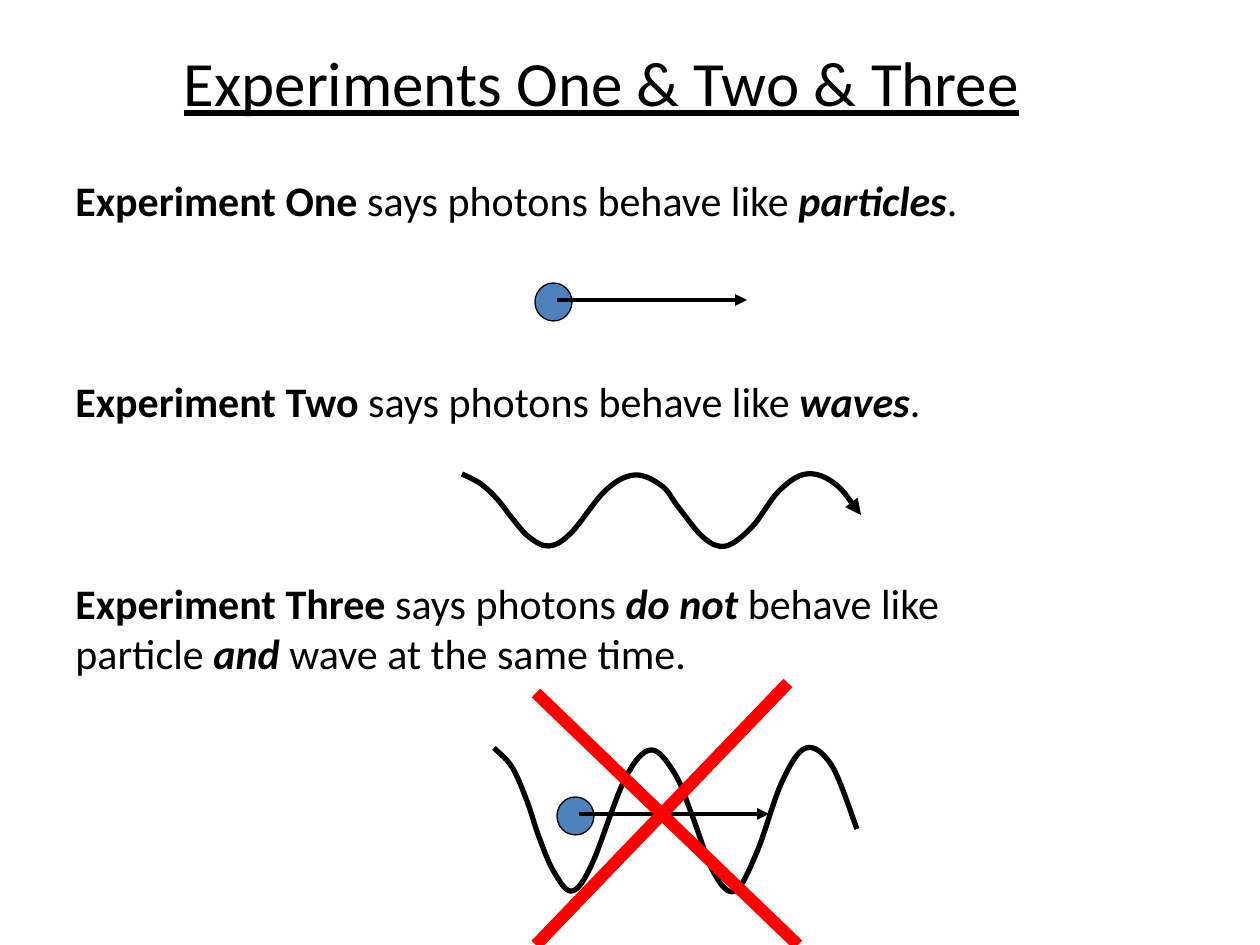
import pptx
import pptx.util
import pptx.dml.color
import pptx.enum.shapes
import pptx.enum.text
import pptx.oxml
import pptx.oxml.ns

PX = 914400 // 126
BLACK = pptx.dml.color.RGBColor(0, 0, 0)
BLUE = pptx.dml.color.RGBColor(0x4F, 0x81, 0xBD)
RED = pptx.dml.color.RGBColor(255, 0, 0)
FONT = "Calibri"

HEADING = "Experiments One & Two & Three"
HEADING_BOX = (171, 37, 868, 89)
FINDINGS_BOX = (63, 168, 916, 522)
FINDING_GAP = 86.4
BOLD = {"bold": True}
EMPHASIS = {"bold": True, "italic": True}
PLAIN = {}
FINDINGS = [
    (0, [("Experiment One", BOLD), (" says photons behave like ", PLAIN),
         ("particles", EMPHASIS), (".", PLAIN)]),
    (FINDING_GAP, [("Experiment Two ", BOLD), ("says photons behave like ", PLAIN),
                   ("waves", EMPHASIS), (".", PLAIN)]),
    (FINDING_GAP, [("Experiment Three", BOLD), (" says photons ", PLAIN),
                   ("do not ", EMPHASIS), ("behave like", PLAIN)]),
    (0, [("particle ", PLAIN), ("and", EMPHASIS), (" wave at the same time.", PLAIN)]),
]

PARTICLE_ONE = (535, 283)
PARTICLE_THREE = (557, 797)
WAVE_TWO = [(462, 474), (481, 484), (498, 500), (512, 518), (529, 537), (549, 546),
            (571, 533), (606, 490), (635, 475), (662, 486), (679, 508), (704, 538),
            (726, 546), (752, 527), (779, 491), (806, 474), (834, 483), (861, 515)]
WAVE_THREE = [(494, 748), (512, 767), (527, 801), (539, 837), (554, 872), (572, 891),
              (592, 864), (625, 779), (651, 750), (675, 774), (692, 815), (714, 873),
              (735, 891), (757, 852), (782, 782), (806, 748), (832, 766), (857, 829)]
CROSS = [(536, 693, 798, 945), (788, 683, 536, 945)]


def emu(lengths):
    return [length * PX for length in lengths]


def apply(target, values):
    for name, value in values.items():
        setattr(target, name, value)


def element(tag, attributes=""):
    return pptx.oxml.parse_xml(
        "<a:%s %s %s/>" % (tag, pptx.oxml.ns.nsdecls("a"), attributes))


def place(box, bounds):
    apply(box, dict(zip(("left", "top", "width", "height"), emu(bounds))))
    apply(box.text_frame, {"word_wrap": False,
                           "vertical_anchor": pptx.enum.text.MSO_ANCHOR.TOP,
                           "auto_size": pptx.enum.text.MSO_AUTO_SIZE.NONE})


def write(paragraph, words, size, style):
    run = paragraph.add_run()
    run.text = words
    apply(run.font, {"name": FONT, "size": pptx.util.Pt(size), **style})
    run.font.color.rgb = BLACK


def stroke(mark, color, width, arrow=False):
    mark.line.color.rgb = color
    mark.line.width = pptx.util.Pt(width)
    if arrow:
        mark.line._get_or_add_ln().append(element("tailEnd", 'type="triangle"'))


def add_line(shapes, ends, color, width, arrow=False):
    line = shapes.add_connector(pptx.enum.shapes.MSO_CONNECTOR.STRAIGHT, *emu(ends))
    stroke(line, color, width, arrow)
    line._element.spPr.append(element("effectLst"))


def add_particle(shapes, corner):
    x, y = corner
    ball = shapes.add_shape(pptx.enum.shapes.MSO_SHAPE.OVAL, *emu((x, y, 37, 38)))
    ball.shadow.inherit = False
    ball.fill.solid()
    ball.fill.fore_color.rgb = BLUE
    stroke(ball, BLACK, 0.75)
    add_line(shapes, (x + 22, y + 17, x + 212, y + 17), BLACK, 2.25, True)


def bend(wave):
    knots = [(int(pt.get("x")), int(pt.get("y")))
             for pt in wave._element.iter(pptx.oxml.ns.qn("a:pt"))]
    padded = [knots[0], *knots, knots[-1]]
    segments = list(wave._element.iter(pptx.oxml.ns.qn("a:lnTo")))
    for i, segment in enumerate(segments):
        before, start, end, after = padded[i:i + 4]
        leave = [s + (e - b) // 6 for b, s, e in zip(before, start, end)]
        arrive = [e - (a - s) // 6 for s, e, a in zip(start, end, after)]
        curve = element("cubicBezTo")
        for x, y in (leave, arrive, end):
            curve.append(element("pt", 'x="%d" y="%d"' % (x, y)))
        segment.getparent().replace(segment, curve)


def add_wave(shapes, knots, arrow=False):
    builder = shapes.build_freeform(*emu(knots[0]))
    builder.add_line_segments([emu(knot) for knot in knots[1:]], close=False)
    wave = builder.convert_to_shape()
    bend(wave)
    wave.shadow.inherit = False
    wave.fill.background()
    stroke(wave, BLACK, 3, arrow)


def main():
    deck = pptx.Presentation()
    apply(deck, {"slide_width": pptx.util.Inches(10), "slide_height": pptx.util.Inches(7.5)})
    slide = deck.slides.add_slide(deck.slide_layouts[5])
    shapes = slide.shapes

    heading = shapes.title
    place(heading, HEADING_BOX)
    heading_line = heading.text_frame.paragraphs[0]
    heading_line.alignment = pptx.enum.text.PP_ALIGN.LEFT
    write(heading_line, HEADING, 36, {"underline": True})

    findings = shapes.add_textbox(0, 0, 0, 0)
    place(findings, FINDINGS_BOX)
    frame = findings.text_frame
    for i, (gap, pieces) in enumerate(FINDINGS):
        finding = frame.add_paragraph() if i else frame.paragraphs[0]
        finding.space_before = pptx.util.Pt(gap)
        for words, style in pieces:
            write(finding, words, 24, style)

    both = shapes.add_group_shape().shapes
    add_particle(both, PARTICLE_THREE)
    add_wave(both, WAVE_THREE)
    add_wave(shapes, WAVE_TWO, True)
    add_particle(shapes.add_group_shape().shapes, PARTICLE_ONE)
    for ends in CROSS:
        add_line(shapes, ends, RED, 7)

    deck.save("out.pptx")


if __name__ == "__main__":
    main()
